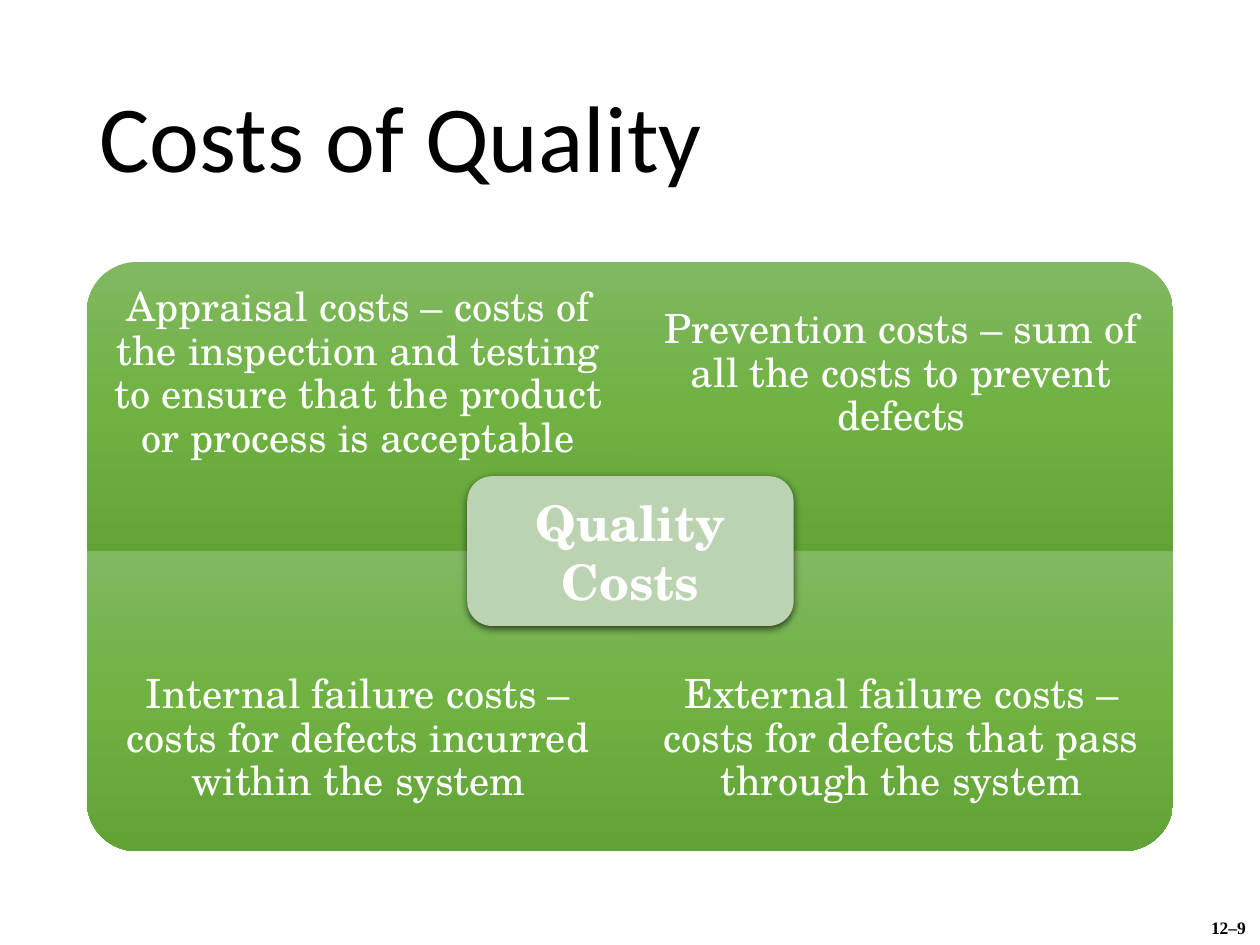
from lxml import etree
from pptx import Presentation
from pptx.dml.color import RGBColor
from pptx.enum import shapes, text
from pptx.oxml.ns import qn
from pptx.util import Cm, Pt


def colour(code):
    return RGBColor.from_string(code)


def write(shape, words, font, inset=None, spacing=None, align=text.PP_ALIGN.CENTER,
          wrap=True, anchor=text.MSO_ANCHOR.MIDDLE):
    frame = shape.text_frame
    settings = {"word_wrap": wrap, "auto_size": text.MSO_AUTO_SIZE.NONE,
                "vertical_anchor": anchor}
    if inset is not None:
        for side in ("left", "top", "right", "bottom"):
            settings["margin_" + side] = inset
    for name, value in settings.items():
        setattr(frame, name, value)
    para = frame.paragraphs[0]
    para.alignment = align
    para.line_spacing = spacing
    span = para.add_run()
    span.text = words
    for name, value in font.items():
        if name == "color":
            span.font.color.rgb = colour(value)
        else:
            setattr(span.font, name, value)


deck = Presentation()
deck.slide_width, deck.slide_height = Cm(25.4), Cm(19.05)
page = deck.slides.add_slide(deck.slide_layouts[5])

# Title
title = page.shapes.title
title.left, title.top, title.width, title.height = Cm(1.75), Cm(1.02), Cm(21.9), Cm(3.68)
write(title, "Costs of Quality", {"name": "Calibri", "size": Pt(54), "color": "000000"},
      spacing=0.9, align=text.PP_ALIGN.LEFT)

# Four panels: row, column, rotation that turns the round corner outwards
left, top, bottom = Cm(1.75), Cm(5.28), Cm(17.16)
panel_width, panel_height, label_height = Cm(10.95), Cm(6.05), Cm(4.52)
panels = [
    (0, 0, 270, "Appraisal costs – costs of the inspection and testing to ensure "
                "that the product or process is acceptable"),
    (0, 1, 0, "Prevention costs – sum of all the costs to prevent defects"),
    (1, 0, 180, "Internal failure costs – costs for defects incurred within the system"),
    (1, 1, 90, "External failure costs – costs for defects that pass through the system"),
]
gradient = [(0, "81B861"), (50000, "6FB242"), (100000, "62A336")]
label_font = {"name": "TeX Gyre Schola", "size": Pt(23), "color": "FFFFFF"}

for row, column, rotation, words in panels:
    x = left + column * panel_width
    y = bottom - panel_height if row else top
    width, height = panel_width, panel_height
    if rotation % 180:
        # A quarter turn swaps the sides about the panel's centre
        width, height = height, width
    panel = page.shapes.add_shape(
        shapes.MSO_SHAPE.ROUND_1_RECTANGLE,
        x + (panel_width - width) // 2, y + (panel_height - height) // 2, width, height)
    panel.rotation = rotation
    panel.shadow.inherit = False
    panel.line.fill.background()
    panel.fill.gradient()
    panel.fill.gradient_angle = 270
    # Three colour stops that stay upright when the panel turns
    grad = panel._element.spPr.find(qn("a:gradFill"))
    grad.set("rotWithShape", "0")
    stops = grad.find(qn("a:gsLst"))
    for stop in list(stops):
        stops.remove(stop)
    for position, code in gradient:
        stop = etree.SubElement(stops, qn("a:gs"), pos=str(position))
        etree.SubElement(stop, qn("a:srgbClr"), val=code)

    label_top = bottom - label_height if row else top
    label = page.shapes.add_textbox(x, label_top, panel_width, label_height)
    write(label, words, label_font, inset=Cm(0.46), spacing=0.9)

# Centre plate with a soft shadow
plate = page.shapes.add_shape(shapes.MSO_SHAPE.ROUNDED_RECTANGLE,
                              Cm(9.42), Cm(9.6), Cm(6.58), Cm(3.02))
plate.fill.solid()
plate.fill.fore_color.rgb = colour("BBD3B1")
plate.line.fill.background()
plate.shadow.inherit = False
effects = plate._element.spPr.find(qn("a:effectLst"))
shadow = etree.SubElement(effects, qn("a:outerShdw"), blurRad=str(Pt(4.5)),
                          dist=str(Pt(1.5)), dir="5400000", algn="ctr", rotWithShape="0")
shade = etree.SubElement(shadow, qn("a:srgbClr"), val="000000")
etree.SubElement(shade, qn("a:alpha"), val="63000")
write(plate, "Quality Costs", {**label_font, "size": Pt(28), "bold": True}, inset=Cm(0.3))

# Page number
number = page.shapes.add_textbox(Cm(24.03), Cm(18.36), Cm(1.47), Cm(0.69))
write(number, "12–9", {"name": "Times New Roman", "size": Pt(10), "bold": True,
                       "color": "000000"}, wrap=False, anchor=text.MSO_ANCHOR.TOP)

deck.save("out.pptx")
